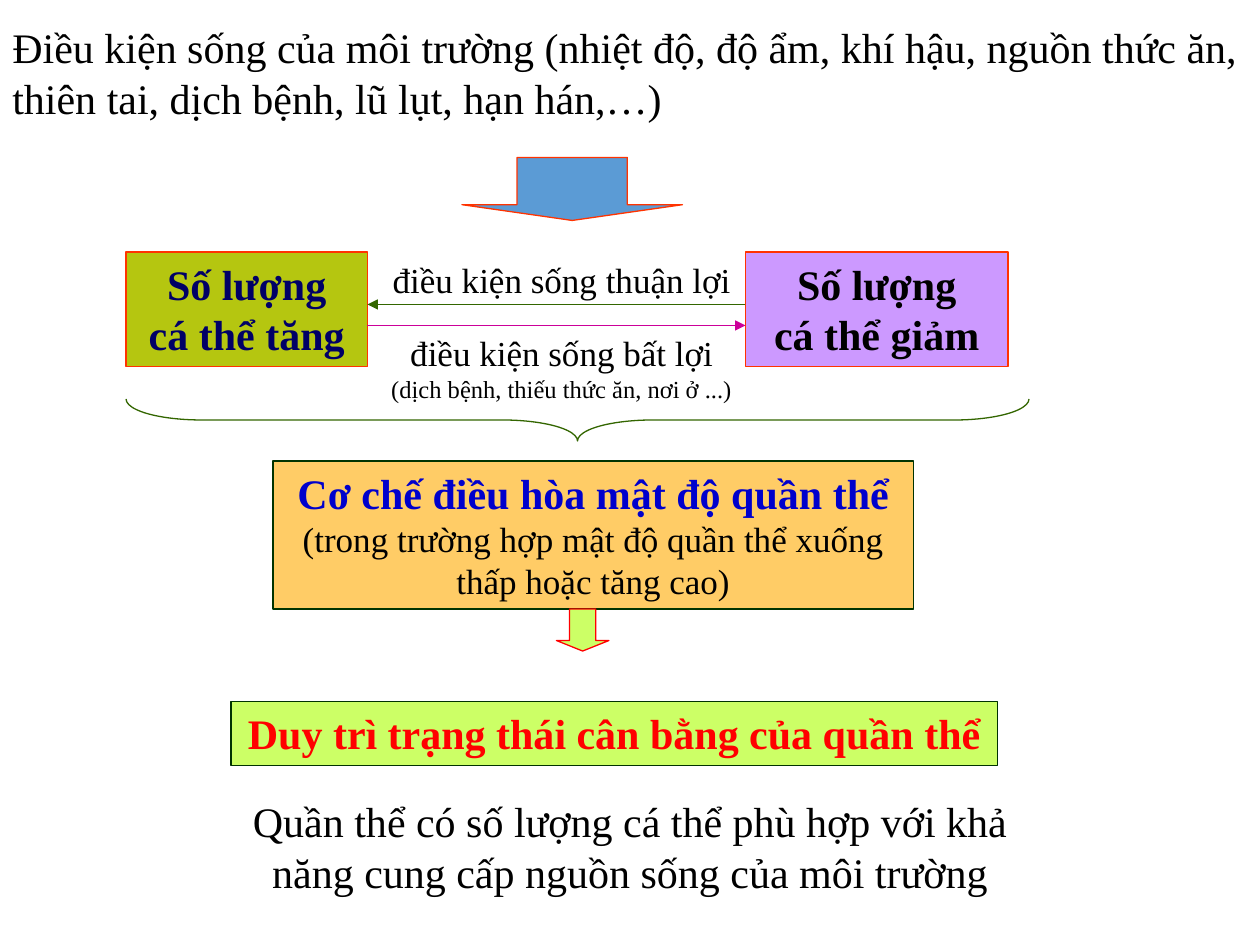
from dataclasses import dataclass

from lxml import etree
from pptx import Presentation, util as u
from pptx.dml.color import RGBColor
from pptx.enum import shapes as s, text as t
from pptx.oxml.ns import qn


@dataclass(frozen=True)
class Theme:
    font: str = "Times New Roman"
    heading: int = 24
    label: int = 20
    note: int = 14
    line: float = 0.75
    black: str = "000000"
    navy: str = "000066"
    blue: str = "0000CC"
    red: str = "FF0000"
    orange: str = "FF3300"
    olive: str = "B5C610"
    violet: str = "CC99FF"
    amber: str = "FFCC66"
    lime: str = "CCFF66"
    sky: str = "5B9BD5"
    green: str = "336600"
    dark_green: str = "003300"
    magenta: str = "CC0099"


THEME = Theme()
COLUMNS, ROWS = 120, 90
WIDTH, HEIGHT = u.Inches(10), u.Inches(7.5)
SHAPE, ALIGN = s.MSO_SHAPE, t.PP_ALIGN


def x(columns):
    return round(columns * WIDTH / COLUMNS)


def y(rows):
    return round(rows * HEIGHT / ROWS)


def place(box):
    left, top, width, height = box
    return x(left), y(top), x(width), y(height)


def write(holder, parts, align=ALIGN.CENTER):
    """Each part is (wording, size, colour, bold)."""
    frame = holder.text_frame
    frame.word_wrap = True
    frame.vertical_anchor = t.MSO_ANCHOR.TOP
    line = frame.paragraphs[0]
    line.alignment = align
    for index, (wording, size, colour, bold) in enumerate(parts):
        if index:
            line.add_line_break()
        for row, words in enumerate(wording.split("\n")):
            if row:
                line.add_line_break()
            run = line.add_run()
            run.text = words
            run.font.name = THEME.font
            run.font.size = u.Pt(size)
            run.font.bold = bold
            run.font.color.rgb = RGBColor.from_string(colour)


def add_label(slide, box, parts, align=ALIGN.CENTER):
    write(slide.shapes.add_textbox(*place(box)), parts, align)


def add_figure(slide, kind, box, outline, fill=None):
    figure = slide.shapes.add_shape(kind, *place(box))
    figure.shadow.inherit = False
    if fill:
        figure.fill.solid()
        figure.fill.fore_color.rgb = RGBColor.from_string(fill)
    else:
        figure.fill.background()
    figure.line.color.rgb = RGBColor.from_string(outline)
    figure.line.width = u.Pt(THEME.line)
    return figure


def add_down_arrow(slide, box, outline, fill):
    arrow = add_figure(slide, SHAPE.DOWN_ARROW, box, outline, fill)
    arrow.adjustments[0], arrow.adjustments[1] = 0.5, 0.25


def add_flow(slide, start, end, row, colour):
    flow = slide.shapes.add_connector(
        s.MSO_CONNECTOR.STRAIGHT, x(start), y(row), x(end), y(row))
    flow.line.color.rgb = RGBColor.from_string(colour)
    flow.line.width = u.Pt(THEME.line)
    etree.SubElement(flow.line._get_or_add_ln(), qn("a:tailEnd"), type="triangle")
    etree.SubElement(flow._element.spPr, qn("a:effectLst"))


def environment(slide, box):
    """Living conditions, with the arrow to their effect."""
    left, top, width, height = box
    add_label(slide, (left, top, width, 10.9), [(
        "Điều kiện sống của môi trường (nhiệt độ, độ ẩm, khí hậu, nguồn thức ăn, "
        "thiên tai, dịch bệnh, lũ lụt, hạn hán,…)",
        THEME.heading, THEME.black, False)], ALIGN.LEFT)
    add_down_arrow(slide, (left + 44, top + height - 6, 21, 6), THEME.orange, THEME.sky)


def population_change(slide, box):
    """Growth and decline, with the conditions that lead to each."""
    left, top, width, height = box
    growth_width, decline_width = 23, 25
    growth_edge = left + growth_width
    decline_edge = left + width - decline_width
    for start, span, fill, wording, colour in (
            (left, growth_width, THEME.olive, "Số lượng\ncá thể tăng", THEME.navy),
            (decline_edge, decline_width, THEME.violet, "Số lượng\ncá thể giảm", THEME.black)):
        state = add_figure(slide, SHAPE.RECTANGLE, (start, top, span, height),
                           THEME.orange, fill)
        write(state, [(wording, THEME.heading, colour, True)])

    add_flow(slide, growth_edge, decline_edge, top + 7, THEME.magenta)
    add_flow(slide, decline_edge, growth_edge, top + 5, THEME.green)

    label_left, label_width = growth_edge + 1, decline_edge - growth_edge - 1
    add_label(slide, (label_left, top, label_width, 5.2), [
        ("điều kiện sống thuận lợi", THEME.label, THEME.black, False)])
    add_label(slide, (label_left, top + 7, label_width, 8), [
        ("điều kiện sống bất lợi", THEME.label, THEME.black, False),
        ("(dịch bệnh, thiếu thức ăn, nơi ở ...)", THEME.note, THEME.black, False)])


def gather(slide, box):
    """A brace lying across the box, its point downwards."""
    left, top, width, height = box
    upright = (left + (width - height) / 2, top + (height - width) / 2, height, width)
    brace = add_figure(slide, SHAPE.RIGHT_BRACE, upright, THEME.green)
    brace.adjustments[0], brace.adjustments[1] = 1.79, 0.5
    brace.rotation = 90


def regulation(slide, box):
    """The regulating mechanism, with the arrow to its result."""
    left, top, width, height = box
    mechanism = add_figure(slide, SHAPE.RECTANGLE, box, THEME.dark_green, THEME.amber)
    write(mechanism, [
        ("Cơ chế điều hòa mật độ quần thể", THEME.heading, THEME.blue, True),
        ("(trong trường hợp mật độ quần thể xuống thấp hoặc tăng cao)",
         THEME.label, THEME.black, False)])
    add_down_arrow(slide, (left + 27, top + height, 5, 4), THEME.red, THEME.lime)


def balance(slide, box):
    """The balanced state and what it means."""
    left, top, width, height = box
    state = add_figure(slide, SHAPE.RECTANGLE, (left + 2, top, 73, 6.1),
                       THEME.dark_green, THEME.lime)
    write(state, [("Duy trì trạng thái cân bằng của quần thể",
                   THEME.heading, THEME.red, True)])
    add_label(slide, (left, top + height - 10.9, width, 10.9), [(
        "Quần thể có số lượng cá thể phù hợp với khả năng cung cấp "
        "nguồn sống của môi trường", THEME.heading, THEME.black, False)])


def main():
    deck = Presentation()
    deck.slide_width, deck.slide_height = WIDTH, HEIGHT
    slide = deck.slides.add_slide(deck.slide_layouts[6])
    environment(slide, (0, 1.5, COLUMNS, 19.5))
    population_change(slide, (12, 24, 84, 10.9))
    gather(slide, (12, 38, 86, 4))
    regulation(slide, (26, 43.9, 61, 14.1))
    balance(slide, (20, 66.8, 80, 19.3))
    deck.save("out.pptx")


if __name__ == "__main__":
    main()
